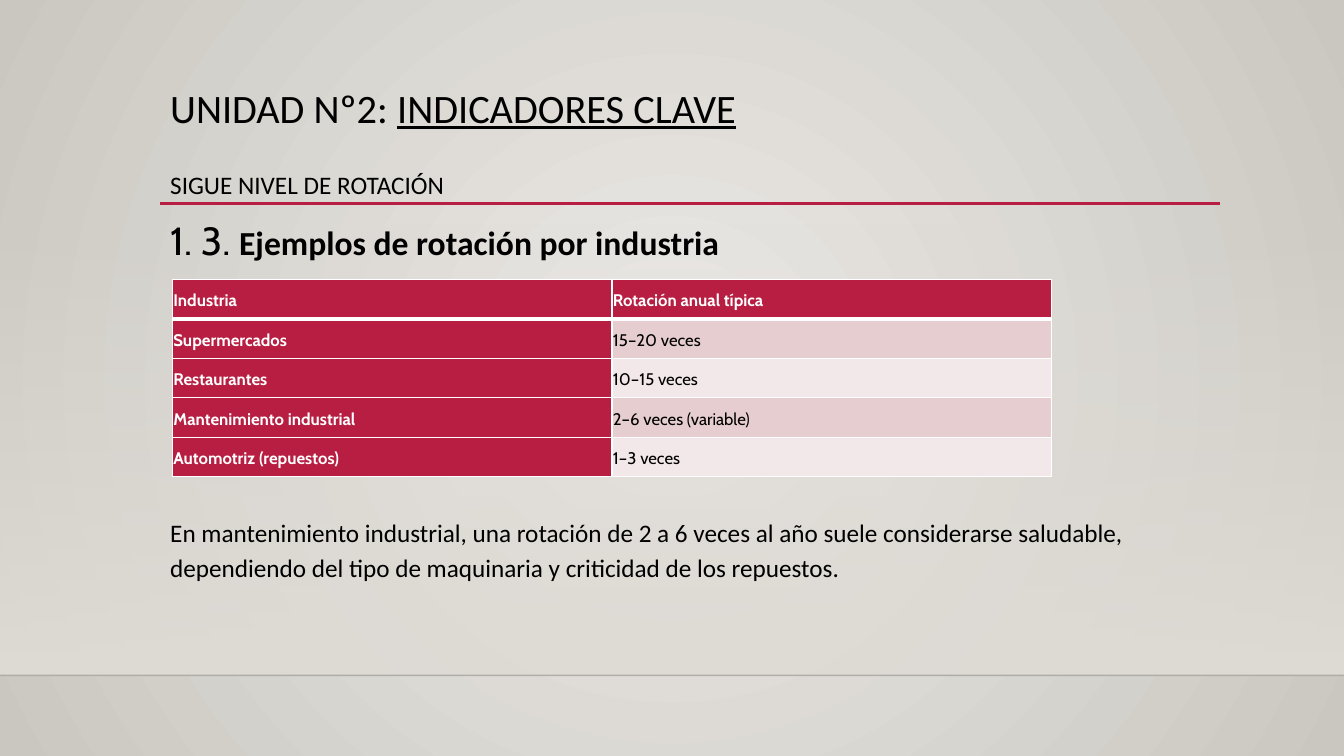
from lxml import etree
from pptx import Presentation
from pptx.dml.color import RGBColor
from pptx.enum.shapes import MSO_CONNECTOR, MSO_SHAPE
from pptx.enum.text import MSO_ANCHOR
from pptx.oxml import parse_xml
from pptx.oxml.ns import nsdecls, qn
from pptx.util import Inches, Pt

BLACK = RGBColor(0x00, 0x00, 0x00)
WHITE = RGBColor(0xFF, 0xFF, 0xFF)
CRIMSON = RGBColor(0xB7, 0x1E, 0x42)
ROSE = RGBColor(0xE6, 0xCD, 0xCF)
PALE_ROSE = RGBColor(0xF3, 0xE8, 0xE9)
CENTER_GRAY = RGBColor(0xEC, 0xEA, 0xE7)
EDGE_GRAY = RGBColor(0xCA, 0xC7, 0xC1)
WALL_GRAY = RGBColor(0xDF, 0xDB, 0xD5)

ROTATION_ROWS = [
    ("Industria", "Rotación anual típica"),
    ("Supermercados", "15–20 veces"),
    ("Restaurantes", "10–15 veces"),
    ("Mantenimiento industrial", "2–6 veces (variable)"),
    ("Automotriz (repuestos)", "1–3 veces"),
]
NOTE = (
    "En mantenimiento industrial, una rotación de 2 a 6 veces al año suele "
    "considerarse saludable, dependiendo del tipo de maquinaria y criticidad "
    "de los repuestos."
)


def set_alpha(color_element, percent):
    etree.SubElement(color_element, qn("a:alpha"), val=str(percent * 1000))


def set_gradient(fill, colors):
    fill.gradient()
    for stop, color in zip(fill.gradient_stops, colors):
        stop.color.rgb = color


def paint_background(slide):
    set_gradient(slide.background.fill, (CENTER_GRAY, EDGE_GRAY))
    gradient = slide.element.find(".//" + qn("a:gradFill"))
    gradient.replace(gradient.find(qn("a:lin")), parse_xml(
        f'<a:path {nsdecls("a")} path="circle">'
        '<a:fillToRect l="50000" t="50000" r="50000" b="50000"/></a:path>'))


def add_wall(slide):
    wall = slide.shapes.add_shape(
        MSO_SHAPE.RECTANGLE, 0, Inches(2.21), Inches(13.33), Inches(4.49))
    wall.shadow.inherit = False
    wall.line.fill.background()
    set_gradient(wall.fill, (WALL_GRAY, WALL_GRAY))
    wall.fill.gradient_angle = 270
    set_alpha(wall.element.find(".//" + qn("a:srgbClr")), 0)


def add_rule(slide, left, right, top, color, width, opacity=100):
    rule = slide.shapes.add_connector(
        MSO_CONNECTOR.STRAIGHT, Inches(left), Inches(top), Inches(right), Inches(top))
    rule.line.color.rgb = color
    rule.line.width = Pt(width)
    if opacity < 100:
        set_alpha(rule.element.find(".//" + qn("a:srgbClr")), opacity)
    etree.SubElement(rule.element.spPr, qn("a:effectLst"))


def add_text(slide, top, height, paragraphs, line_spacing):
    box = slide.shapes.add_textbox(
        Inches(1.59), Inches(top), Inches(10.5), Inches(height))
    text_frame = box.text_frame
    text_frame.word_wrap = True
    for index, (space_before, space_after, runs) in enumerate(paragraphs):
        paragraph = text_frame.add_paragraph() if index else text_frame.paragraphs[0]
        paragraph.line_spacing = line_spacing
        paragraph.space_before = Pt(space_before)
        paragraph.space_after = Pt(space_after)
        for text, font_name, size, bold, underline in runs:
            run = paragraph.add_run()
            run.text = text
            format_font(run.font, font_name, size, BLACK, bold)
            run.font.underline = underline


def format_font(font, name, size, color, bold):
    font.name = name
    font.size = Pt(size)
    font.color.rgb = color
    font.bold = bold


def add_borders(cell, row):
    properties = cell._tc.get_or_add_tcPr()
    widths = {"L": 1, "R": 1, "T": 3 if row == 1 else 1, "B": 3 if row == 0 else 1}
    for side, width in widths.items():
        properties.append(parse_xml(
            f'<a:ln{side} {nsdecls("a")} w="{Pt(width)}"><a:solidFill>'
            f'<a:srgbClr val="{WHITE}"/></a:solidFill></a:ln{side}>'))


def format_cell(cell, text, row, column):
    heading = row == 0 or column == 0
    add_borders(cell, row)
    cell.fill.solid()
    cell.fill.fore_color.rgb = CRIMSON if heading else (ROSE if row % 2 else PALE_ROSE)
    cell.vertical_anchor = MSO_ANCHOR.MIDDLE
    cell.margin_left = cell.margin_right = Inches(0.01)
    cell.margin_top = cell.margin_bottom = Inches(0.01)
    cell.text_frame.text = text
    paragraph = cell.text_frame.paragraphs[0]
    paragraph.line_spacing = 1.15
    paragraph.space_after = Pt(8)
    format_font(paragraph.runs[0].font, "Cabin", 12, WHITE if heading else BLACK, heading)


def add_rotation_table(slide):
    table = slide.shapes.add_table(
        len(ROTATION_ROWS), 2, Inches(1.71), Inches(2.77),
        Inches(8.72), Inches(1.96)).table
    table.first_col = True
    for row, texts in enumerate(ROTATION_ROWS):
        for column, text in enumerate(texts):
            format_cell(table.cell(row, column), text, row, column)


def main():
    presentation = Presentation()
    presentation.slide_width = Inches(13.33)
    presentation.slide_height = Inches(7.5)
    slide = presentation.slides.add_slide(presentation.slide_layouts[6])
    paint_background(slide)
    add_wall(slide)
    add_rule(slide, 0, 13.33, 6.7, BLACK, 1, 20)
    add_rule(slide, 1.59, 12.1, 2.02, CRIMSON, 2.5)
    add_text(slide, 0.83, 1.2, [
        (0, 0, [("UNIDAD Nº2: ", "Calibri", 28.8, False, False),
                ("INDICADORES CLAVE", "Calibri", 28.8, False, True)]),
        (29, 0, [("SIGUE NIVEL DE ROTACIÓN", "Calibri", 18, False, False)]),
    ], 0.9)
    add_text(slide, 2.03, 4.66, [
        (0, 8, [("1. 3. ", "Cabin", 28, False, False),
                ("Ejemplos de rotación por industria", "Calibri", 24, True, False)]),
        (170, 8, [(NOTE, "Calibri", 18, False, False)]),
    ], 1.15)
    add_rotation_table(slide)
    presentation.save("out.pptx")


if __name__ == "__main__":
    main()
